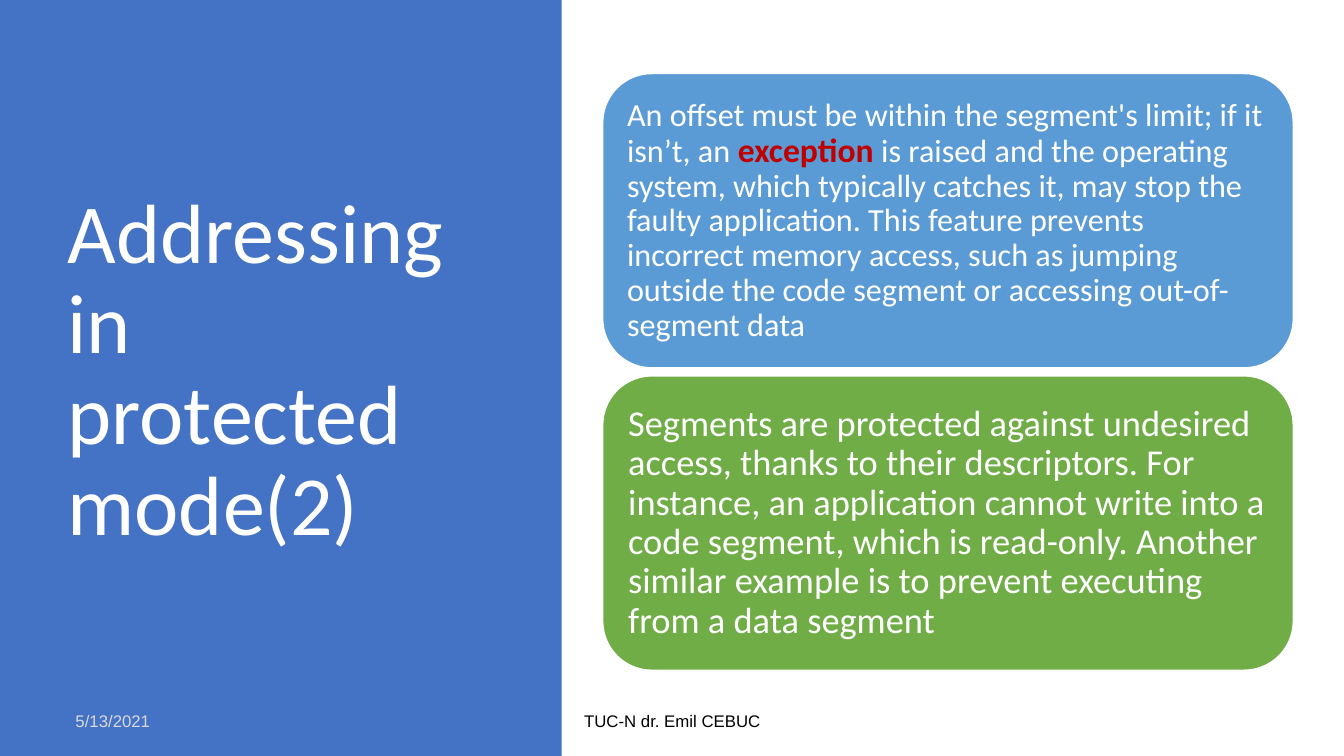
from dataclasses import dataclass

from pptx import Presentation
from pptx.dml.color import RGBColor
from pptx.enum.shapes import MSO_SHAPE as Shape
from pptx.enum.text import MSO_ANCHOR as Anchor, MSO_AUTO_SIZE as AutoSize, PP_ALIGN as Align
from pptx.util import Inches, Pt

WIDTH, HEIGHT = Inches(13.33), Inches(7.5)
COLUMNS = ROWS = 100
WHITE = "FFFFFF"
CARD_TOP, CARD_PITCH = 9.73, 40


@dataclass
class Area:
    """A place on the slide in grid columns and rows."""
    left: float
    top: float
    width: float
    height: float

    def lengths(self) -> tuple[int, int, int, int]:
        """Return left, top, width and height in slide units."""
        column, row = WIDTH / COLUMNS, HEIGHT / ROWS
        return (int(self.left * column), int(self.top * row),
                int(self.width * column), int(self.height * row))


@dataclass
class Span:
    """A piece of text, with the looks that set it apart."""
    text: str
    size: float | None = None
    color: str | None = None
    bold: bool | None = None


@dataclass
class Card:
    """A rounded panel with one paragraph."""
    fill: str
    size: float
    inset: float
    spans: list[Span]


@dataclass
class Label:
    """A small line at the foot of the slide."""
    text: str
    area: Area
    color: str
    align: Align


CARDS = [
    Card("5B9BD5", 23, 0.1, [
        Span("An offset must be within the segment's limit; if it isn’t, an "),
        Span("exception ", 24, "C00000", True),
        Span("is raised and the operating system, which typically catches it, "
             "may stop the faulty application. This feature prevents incorrect "
             "memory access, such as jumping outside the code segment or "
             "accessing out-of-segment data"),
    ]),
    Card("70AD47", 26, 0.11, [
        Span("Segments are protected against undesired access, thanks to their "
             "descriptors. For instance, an application cannot write into a code "
             "segment, which is read-only. Another similar example is to prevent "
             "executing from a data segment"),
    ]),
]
LABELS = [
    Label("5/13/2021", Area(4.88, 92.67, 22.5, 5.33), "D9D9D9", Align.LEFT),
    Label("TUC-N dr. Emil CEBUC", Area(33.15, 92.67, 33.75, 5.33), "000000", Align.CENTER),
]


def rgb(value: str) -> RGBColor:
    """Turn a hex string into a colour."""
    return RGBColor.from_string(value)


def write(frame, spans: list[Span], font: str, size: float, color: str,
          align: Align = Align.LEFT, spacing: float = 1.0) -> None:
    """Fill a text frame with one vertically centred paragraph."""
    frame.word_wrap = True
    frame.auto_size = AutoSize.NONE
    frame.vertical_anchor = Anchor.MIDDLE
    para = frame.paragraphs[0]
    para.alignment, para.line_spacing = align, spacing
    para.font.name, para.font.size = font, Pt(size)
    para.font.color.rgb = rgb(color)
    for span in spans:
        run = para.add_run()
        run.text = span.text
        run.font.bold = span.bold
        if span.size:
            run.font.size = Pt(span.size)
        if span.color:
            run.font.color.rgb = rgb(span.color)


def add_panel(page, kind: Shape, area: Area, fill: str, line: str | None = None):
    """Add a flat filled shape, outlined if a line colour is given."""
    panel = page.shapes.add_shape(kind, *area.lengths())
    panel.shadow.inherit = False
    panel.fill.solid()
    panel.fill.fore_color.rgb = rgb(fill)
    if line:
        panel.line.color.rgb = rgb(line)
        panel.line.width = Pt(1)
    else:
        panel.line.fill.background()
    return panel


def add_title(page, text: str, area: Area) -> None:
    """Place and format the title placeholder."""
    title = page.shapes.title
    title.left, title.top, title.width, title.height = area.lengths()
    write(title.text_frame, [Span(text)], "Calibri", 60, WHITE, spacing=0.9)


def add_label(page, label: Label) -> None:
    """Add a footer line."""
    box = page.shapes.add_textbox(*label.area.lengths())
    write(box.text_frame, [Span(label.text)], "Arial", 12, label.color, label.align)


def add_card(page, card: Card, index: int) -> None:
    """Add a card at its step down the right-hand side."""
    area = Area(44.85, CARD_TOP + index * CARD_PITCH, 51.38, 38.93)
    frame = add_panel(page, Shape.ROUNDED_RECTANGLE, area, card.fill, WHITE).text_frame
    frame.margin_left = frame.margin_right = Inches(card.inset)
    frame.margin_top = frame.margin_bottom = Inches(card.inset)
    write(frame, card.spans, "Calibri", card.size, WHITE, spacing=0.9)


def main() -> None:
    """Build and save the slide."""
    deck = Presentation()
    deck.slide_width, deck.slide_height = WIDTH, HEIGHT
    page = deck.slides.add_slide(deck.slide_layouts[5])
    sidebar = add_panel(page, Shape.RECTANGLE, Area(0, 0, 41.79, ROWS), "4472C4")
    page.shapes.title.element.addprevious(sidebar.element)
    add_title(page, "Addressing in protected mode(2)", Area(4.28, 9.07, 31.2, 80.27))
    for label in LABELS:
        add_label(page, label)
    for index, card in enumerate(CARDS):
        add_card(page, card, index)
    deck.save("out.pptx")


if __name__ == "__main__":
    main()
